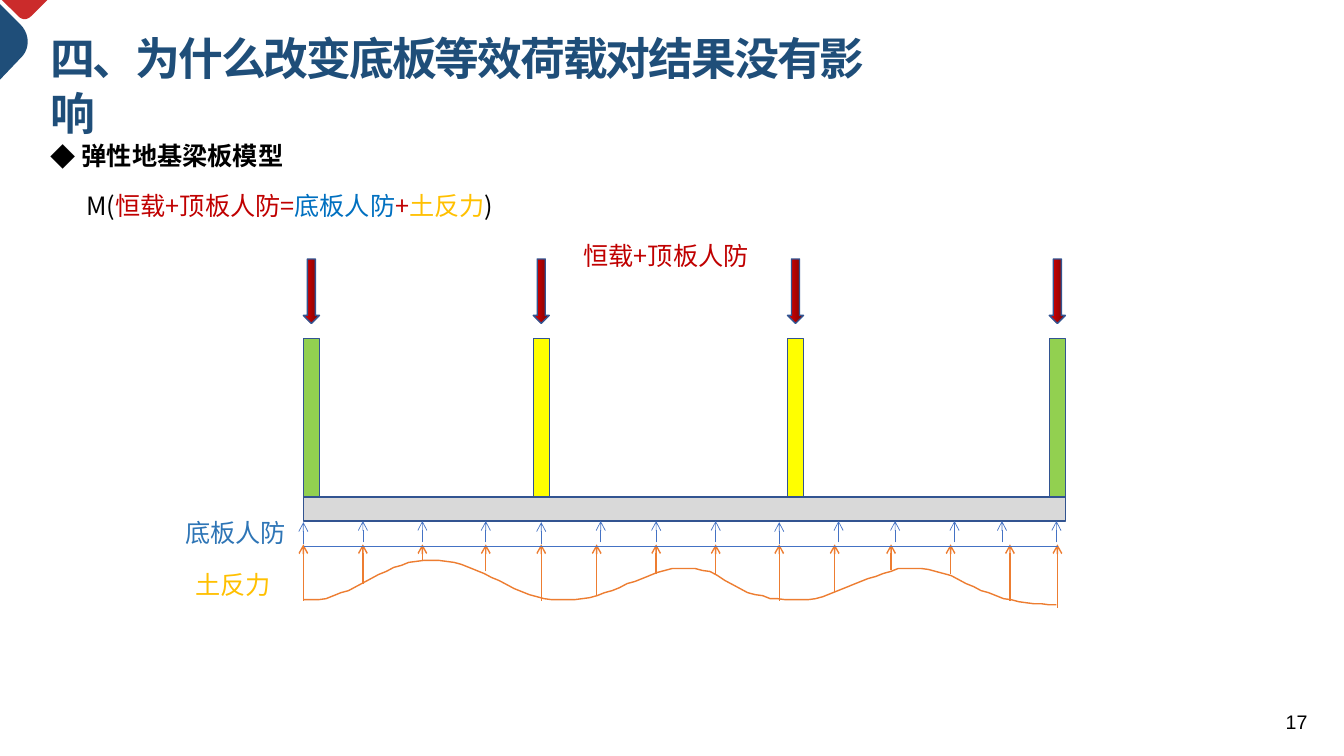
from dataclasses import dataclass

import pptx
import pptx.dml.color
import pptx.enum.shapes
import pptx.enum.text
import pptx.oxml.ns
import pptx.util
from lxml import etree

Pt = pptx.util.Pt
qn = pptx.oxml.ns.qn
SHAPE = pptx.enum.shapes.MSO_SHAPE
ALIGN = pptx.enum.text.PP_ALIGN
ANCHOR = pptx.enum.text.MSO_ANCHOR
CJK = "Noto Sans CJK SC"
OUTLINE, ORANGE, BLUE, NAVY, RED = "325491", "ED7D31", "4472C4", "1F4E79", "C00000"


@dataclass
class Box:
    left: float
    top: float
    width: float
    height: float


@dataclass
class Label:
    box: Box
    runs: list[tuple[str, str]]
    size: float = 18
    font: str = CJK
    bold: bool = False
    spacing: float | None = None
    align: ALIGN = ALIGN.LEFT
    anchor: ANCHOR = ANCHOR.TOP
    tracking: int = 0
    bullet: str = ""


@dataclass
class Arrow:
    x: float
    start: float
    end: float


def rgb(value: str) -> pptx.dml.color.RGBColor:
    return pptx.dml.color.RGBColor.from_string(value)


def set_all(target, values: dict) -> None:
    for name, value in values.items():
        setattr(target, name, value)


def paint(sp, fill: str | None, line: str | None = None) -> None:
    sp.shadow.inherit = False
    if fill:
        sp.fill.solid()
        sp.fill.fore_color.rgb = rgb(fill)
    else:
        sp.fill.background()
    if line:
        set_all(sp.line, {"width": Pt(1)})
        sp.line.color.rgb = rgb(line)
    else:
        sp.line.fill.background()


def add_shape(s, kind: SHAPE, box: Box, fill: str | None, line: str | None = None):
    sp = s.shapes.add_shape(kind, Pt(box.left), Pt(box.top), Pt(box.width), Pt(box.height))
    paint(sp, fill, line)
    return sp


def add_outline(s, points: list[tuple[float, float]], fill: str | None,
                line: str | None = None) -> None:
    builder = s.shapes.build_freeform(*(round(v * 100) for v in points[0]), scale=Pt(1) / 100)
    builder.add_line_segments([(round(x * 100), round(y * 100)) for x, y in points[1:]],
                              close=fill is not None)
    paint(builder.convert_to_shape(), fill, line)


def bezier(a, b, c, d, steps: int = 10) -> list[tuple[float, float]]:
    ts = [i / steps for i in range(steps + 1)]
    return [tuple((1 - t) ** 3 * p + 3 * (1 - t) ** 2 * t * q + 3 * (1 - t) * t * t * r + t ** 3 * e
                  for p, q, r, e in zip(a, b, c, d)) for t in ts]


def add_label(s, label: Label) -> None:
    b = label.box
    sp = s.shapes.add_textbox(Pt(b.left), Pt(b.top), Pt(b.width), Pt(b.height))
    tf = sp.text_frame
    set_all(tf, {"word_wrap": True, "vertical_anchor": label.anchor})
    p = tf.paragraphs[0]
    p.alignment = label.align
    if label.spacing:
        p.line_spacing = Pt(label.spacing)
    if label.bullet:
        p_pr = p._p.get_or_add_pPr()
        p_pr.set("marL", str(Pt(22.5)))
        p_pr.set("indent", str(-Pt(22.5)))
        etree.SubElement(p_pr, qn("a:buFont")).set("typeface", CJK)
        etree.SubElement(p_pr, qn("a:buChar")).set("char", label.bullet)
    for text, color in label.runs:
        r = p.add_run()
        r.text = text
        set_all(r.font, {"size": Pt(label.size), "name": label.font, "bold": label.bold})
        r.font.color.rgb = rgb(color)
        r_pr = r._r.get_or_add_rPr()
        etree.SubElement(r_pr, qn("a:ea")).set("typeface", CJK)
        if label.tracking:
            r_pr.set("spc", str(label.tracking))


def add_line(s, x1: float, y1: float, x2: float, y2: float, color: str, width: float,
             head: bool = False) -> None:
    cx = s.shapes.add_connector(pptx.enum.shapes.MSO_CONNECTOR.STRAIGHT,
                                Pt(x1), Pt(y1), Pt(x2), Pt(y2))
    cx.line.width = Pt(width)
    cx.line.color.rgb = rgb(color)
    if head:
        etree.SubElement(cx.line._get_or_add_ln(), qn("a:tailEnd")).set("type", "arrow")
    etree.SubElement(cx._element.spPr, qn("a:effectLst"))


# Columns: left edge, fill
COLUMNS = [(216.7, "92D050"), (380.9, "FFFF00"), (562.5, "FFFF00"), (749.5, "92D050")]

# Soil reaction: depths below y = 360 in steps of 0.72 pt, at equal gaps
SOIL_LEFT, SOIL_WIDTH = 216.7, 537.9
SOIL_DEPTHS = [
    95, 95, 95, 94, 91, 88, 86, 82, 78, 74, 70, 67, 63, 61, 58, 57, 56, 56, 56, 57,
    58, 60, 63, 66, 69, 73, 76, 80, 84, 87, 90, 92, 94, 95, 95, 95, 95, 94, 93, 91,
    88, 86, 83, 79, 77, 74, 71, 68, 66, 64, 64, 64, 64, 66, 67, 71, 76, 80, 84, 88,
    90, 91, 94, 94, 95, 95, 95, 95, 94, 92, 89, 86, 83, 80, 77, 74, 72, 69, 67, 64,
    64, 64, 64, 65, 67, 69, 71, 75, 79, 82, 86, 88, 91, 94, 95, 97, 98, 99, 99, 100, 100]

SOIL_ARROWS = [Arrow(x, y, 388.8) for x, y in [
    (216.7, 429.1), (259.2, 416.9), (301.7, 400.3), (347, 408.2), (386.6, 429.1),
    (426.2, 424.8), (468.7, 409.7), (511.2, 410.4), (556.6, 429.1), (596.2, 422.6),
    (636.5, 407.5), (679, 409.7), (721.4, 429.1), (755.3, 434.2)]]

# Slab load: arrows under a column sit slightly lower
SLAB_XS = [216.7, 259.2, 301.7, 347, 386.6, 429.1, 468.7, 511.2, 556.6, 599, 639.4,
           681.8, 715.7, 754.6]
SLAB_ARROWS = [Arrow(x, 388.8, 373) if i in (0, 4, 8) else Arrow(x, 387.4, 372.2)
               for i, x in enumerate(SLAB_XS)]

HEADINGS = [
    Label(Box(904.3, 501.1, 36.7, 28.8), [("17", "000000")], size=14, font="Arial",
          align=ALIGN.RIGHT, anchor=ANCHOR.MIDDLE),
    Label(Box(28.8, 18, 624.2, 46.1), [("四、为什么改变底板等效荷载对结果没有影响", NAVY)],
          size=32, font="Arial", bold=True, spacing=39, tracking=-150),
    Label(Box(28.8, 75.6, 486.7, 94.3), [("弹性地基梁板模型", "000000")],
          bold=True, spacing=43, bullet="◆"),
]
CAPTIONS = [
    Label(Box(409.7, 167.8, 141.1, 28.8), [("恒载+顶板人防", RED)], spacing=22),
    Label(Box(132.5, 402.5, 79.2, 28.8), [("土反力", "FFC000")], spacing=22),
    Label(Box(125.3, 365.8, 91.4, 28.8), [("底板人防", "2E75B6")], spacing=22),
    Label(Box(54.7, 131.8, 334.1, 28.8),
          [("M(", "000000"), ("恒载+顶板人防=", RED), ("底板人防", "0070C0"), ("+", RED),
           ("土反力", "FFC000"), (")", "000000")], spacing=22),
]


def main() -> None:
    prs = pptx.Presentation()
    set_all(prs, {"slide_width": Pt(960), "slide_height": Pt(540)})
    s = prs.slides.add_slide(prs.slide_layouts[6])

    # Corner decoration
    add_outline(s, [(1.4, 0), (33.8, 0)]
                + bezier((22.3, 11.5), (19.4, 14.4), (15.8, 14.4), (13, 11.5)), "CB2B2B")
    add_outline(s, [(0, 2.9)] + bezier((14.4, 17.3), (21.6, 24.5), (21.6, 35.3), (14.4, 41.8))
                + [(0, 56.9)], NAVY)

    # Page number, title and bullet
    for label in HEADINGS:
        add_label(s, label)

    # Slab, columns and column loads
    add_shape(s, SHAPE.RECTANGLE, Box(216.7, 355, 544.3, 17.3), "D9D9D9", OUTLINE)
    for left, fill in COLUMNS:
        add_shape(s, SHAPE.RECTANGLE, Box(left, 242, 11.5, 113), fill, OUTLINE)
        sp = add_shape(s, SHAPE.DOWN_ARROW, Box(left, 185, 11.5, 46.1), None, OUTLINE)
        sp.fill.gradient()
        sp.fill.gradient_angle = 0
        for stop, (position, color) in zip(sp.fill.gradient_stops, [(0, "E30000"), (1, "760303")]):
            stop.position = position
            stop.color.rgb = rgb(color)

    # Soil reaction and slab load
    step = SOIL_WIDTH / (len(SOIL_DEPTHS) - 1)
    add_outline(s, [(SOIL_LEFT + i * step, 360 + 0.72 * d) for i, d in enumerate(SOIL_DEPTHS)],
                None, ORANGE)
    for a in SOIL_ARROWS:
        add_line(s, a.x, a.start, a.x, a.end, ORANGE, 1, head=True)
    add_line(s, 217.4, 390.2, 756, 390.2, BLUE, 0.5)
    for a in SLAB_ARROWS:
        add_line(s, a.x, a.start, a.x, a.end, BLUE, 0.5, head=True)

    # Captions and formula
    for label in CAPTIONS:
        add_label(s, label)

    prs.save("out.pptx")


if __name__ == "__main__":
    main()
